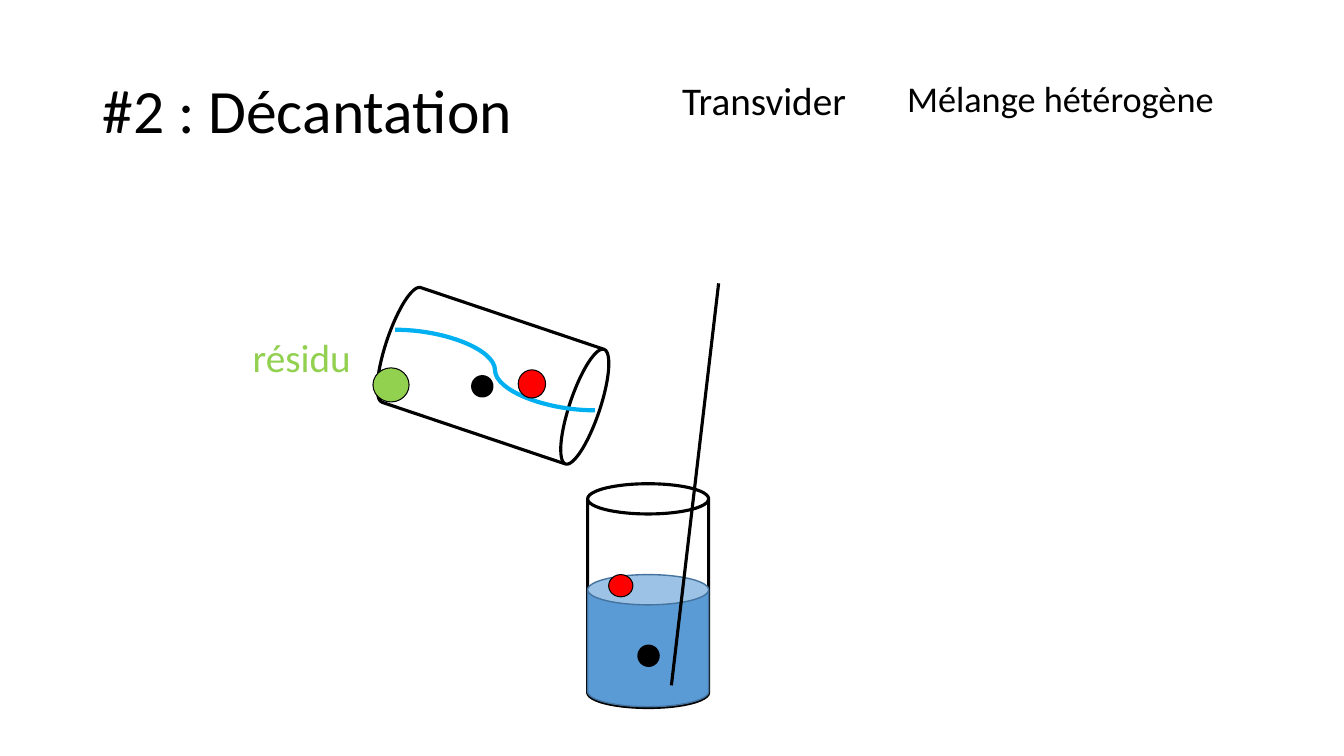
"""Build the slide showing decantation from a tilted beaker into a second one."""
from lxml.etree import SubElement
from pptx import Presentation
from pptx.dml.color import RGBColor
from pptx.enum.shapes import MSO_CONNECTOR, MSO_SHAPE
from pptx.enum.text import MSO_ANCHOR
from pptx.oxml.ns import qn
from pptx.util import Cm, Pt

BLACK = RGBColor(0x00, 0x00, 0x00)
WHITE = RGBColor(0xFF, 0xFF, 0xFF)
RED = RGBColor(0xFF, 0x00, 0x00)
GREEN = RGBColor(0x92, 0xD0, 0x50)
CYAN = RGBColor(0x00, 0xB0, 0xF0)
WATER = RGBColor(0x5B, 0x9B, 0xD5)
WATER_EDGE = RGBColor(0x43, 0x73, 0x9E)

TITLE = ("#2 : Décantation", (2.33, 1.02, 29.21, 3.68))
LABELS = [
    ("Transvider", (16.94, 1.93, 5.18, 1.83), 28, BLACK),
    ("résidu", (6.12, 8.41, 3.2, 1.83), 28, GREEN),
    ("Mélange hétérogène", (22.61, 1.93, 8.51, 1.83), 25.9, BLACK),
]
BEAKER_SIZE = (3.05, 5.64)
BEAKERS = [((10.9, 6.65), 108.6), ((14.81, 12.19), 0)]
WATER_AREA = (14.81, 14.48, 3.05, 3.33)
TILTED_GRAINS = [
    ((11.89, 9.47, 0.53, 0.53), BLACK, 1),
    ((13.06, 9.32, 0.69, 0.71), RED, 0.75),
    ((9.4, 9.27, 0.91, 0.86), GREEN, 0.75),
]
POURED_GRAINS = [
    ((16.08, 16.26, 0.53, 0.53), BLACK, 1),
    ((15.34, 14.48, 0.61, 0.56), RED, 0.75),
]
LIQUID_SURFACE = (9.96, 8.31, 14.99, 10.34)
ROD = (18.11, 7.14, 16.92, 17.27)


def add_text(page, text, area, size=28, color=BLACK, before=10, anchor=MSO_ANCHOR.TOP):
    box = page.shapes.add_textbox(*map(Cm, area))
    box.text_frame.word_wrap = True
    box.text_frame.vertical_anchor = anchor
    para = box.text_frame.paragraphs[0]
    para.line_spacing = 0.9
    para.space_before = Pt(before)
    span = para.add_run()
    span.text = text
    span.font.name = "Calibri"
    span.font.size = Pt(size)
    span.font.color.rgb = color


def add_figure(page, kind, area, fill, line=BLACK, width=1, rotation=0):
    figure = page.shapes.add_shape(kind, *map(Cm, area))
    figure.shadow.inherit = False
    figure.rotation = rotation
    figure.fill.solid()
    figure.fill.fore_color.rgb = fill
    figure.line.color.rgb = line
    figure.line.width = Pt(width)


def add_line(page, kind, ends, color, width):
    connector = page.shapes.add_connector(kind, *map(Cm, ends))
    connector.line.color.rgb = color
    connector.line.width = Pt(width)
    SubElement(connector._element.spPr, qn("a:effectLst"))


def add_grains(page, grains):
    for area, color, width in grains:
        add_figure(page, MSO_SHAPE.OVAL, area, color, width=width)


def main():
    deck = Presentation()
    deck.slide_width, deck.slide_height = Cm(33.87), Cm(19.05)
    page = deck.slides.add_slide(deck.slide_layouts[6])

    add_text(page, *TITLE, size=44, before=0, anchor=MSO_ANCHOR.MIDDLE)
    for text, area, size, color in LABELS:
        add_text(page, text, area, size=size, color=color)

    for corner, rotation in BEAKERS:
        add_figure(page, MSO_SHAPE.CAN, corner + BEAKER_SIZE, WHITE,
                   width=2.25, rotation=rotation)
    add_line(page, MSO_CONNECTOR.CURVE, LIQUID_SURFACE, CYAN, 3)
    add_grains(page, TILTED_GRAINS)
    add_figure(page, MSO_SHAPE.CAN, WATER_AREA, WATER, line=WATER_EDGE)
    add_grains(page, POURED_GRAINS)
    add_line(page, MSO_CONNECTOR.STRAIGHT, ROD, BLACK, 2.25)

    deck.save("out.pptx")


if __name__ == "__main__":
    main()
